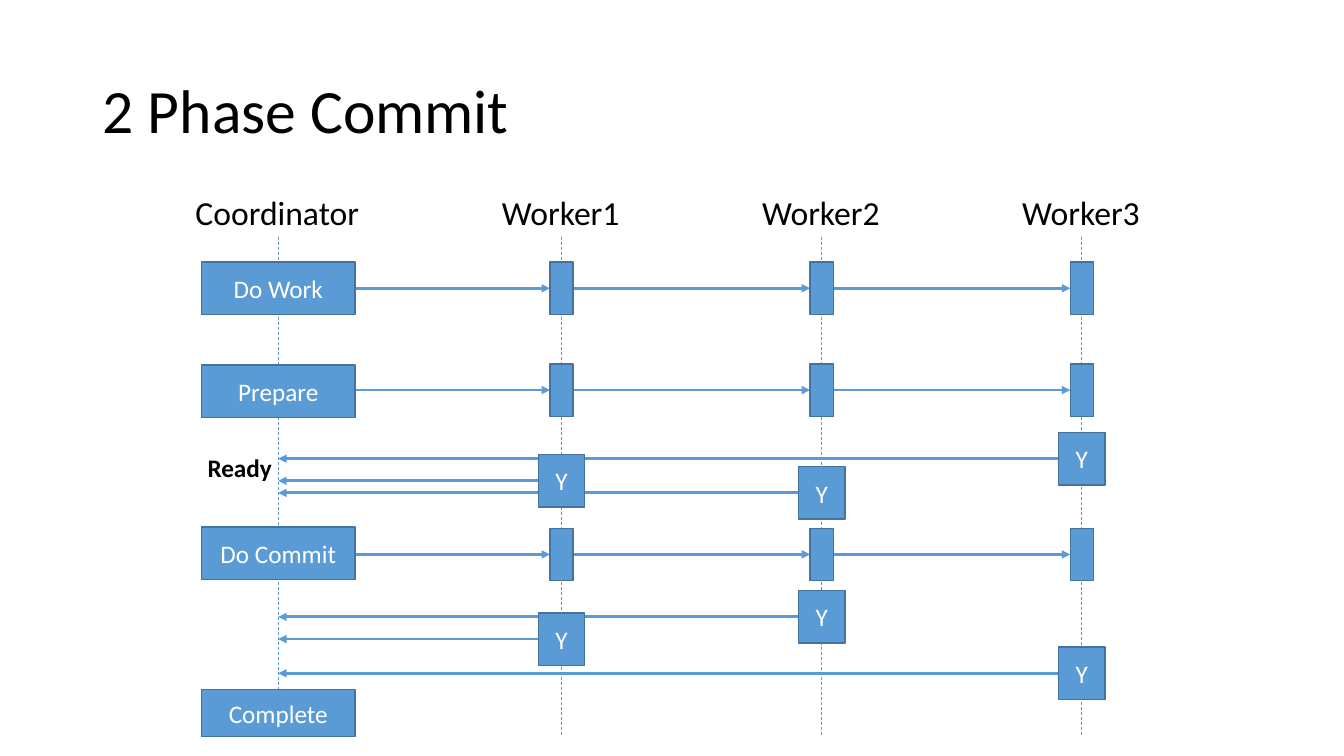
from pptx import Presentation
from pptx.dml.color import RGBColor
from pptx.enum.dml import MSO_LINE
from pptx.enum.shapes import MSO_CONNECTOR, MSO_SHAPE
from pptx.enum.text import MSO_ANCHOR, MSO_AUTO_SIZE, PP_ALIGN
from pptx.oxml.ns import qn
from pptx.util import Inches, Pt
from lxml import etree

BLUE = RGBColor(0x5B, 0x9B, 0xD5)
EDGE = RGBColor(0x43, 0x73, 0x9E)
BLACK = RGBColor(0, 0, 0)
WHITE = RGBColor(255, 255, 255)
RECT, STRAIGHT, DASH = MSO_SHAPE.RECTANGLE, MSO_CONNECTOR.STRAIGHT, MSO_LINE.DASH
MIDDLE, LEFT, CENTER = MSO_ANCHOR.MIDDLE, PP_ALIGN.LEFT, PP_ALIGN.CENTER
FIT = MSO_AUTO_SIZE.SHAPE_TO_FIT_TEXT

TITLE = "2 Phase Commit"
# name, lifeline x, label width
ROLES = [
    ("Coordinator", 2.76, 1.84),
    ("Worker1", 5.57, 1.38),
    ("Worker2", 8.15, 1.38),
    ("Worker3", 10.73, 1.38),
]
# text, top, height
STEPS = [
    ("Do Work", 2.6, 0.52),
    ("Prepare", 3.62, 0.52),
    ("Do Commit", 5.23, 0.52),
    ("Complete", 6.84, 0.47),
]
CALLS = [2.86, 3.87, 5.5]  # heights of the requests to the workers
# worker number, height of its answer
VOTES = [(3, 4.55), (2, 4.89), (1, 4.77), (3, 6.68), (2, 6.12), (1, 6.34)]

STEP_W, BAR_W, VOTE_W, BOX_H = 1.52, 0.23, 0.46, 0.52
LIFE_TOP, LIFE_END = 2.35, 7.31

prs = Presentation()
prs.slide_width, prs.slide_height = Inches(13.33), Inches(7.5)
slide = prs.slides.add_slide(prs.slide_layouts[5])
shapes = slide.shapes


def write(shape, text, align=LEFT, **style):
    frame = shape.text_frame
    frame.text = text
    para = frame.paragraphs[0]
    para.alignment = align
    para.font.color.rgb = style.pop("color", BLACK)
    for key, value in {"name": "Calibri", "size": Pt(18), **style}.items():
        setattr(para.font, key, value)


def label(text, x, y, w, h, **style):
    box = shapes.add_textbox(Inches(x), Inches(y), Inches(w), Inches(h))
    write(box, text, **style)
    box.text_frame.word_wrap = False
    box.text_frame.auto_size = FIT


def block(mid, top, w, h, text=""):
    """Draw a filled box centred on the lifeline at mid."""
    box = shapes.add_shape(RECT, Inches(mid - w / 2), Inches(top), Inches(w), Inches(h))
    box.shadow.inherit = False
    box.fill.solid()
    box.fill.fore_color.rgb = BLUE
    box.line.color.rgb = EDGE
    box.line.width = Pt(1)
    if text:
        write(box, text, CENTER, color=WHITE)
        box.text_frame.vertical_anchor = MIDDLE


def line(x1, y1, x2, y2, width):
    link = shapes.add_connector(STRAIGHT, Inches(x1), Inches(y1), Inches(x2), Inches(y2))
    link.line.color.rgb = BLUE
    link.line.width = Pt(width)
    etree.SubElement(link._element.spPr, qn("a:effectLst"))
    return link


def arrow(x1, x2, y):
    link = line(x1, y, x2, y, 2)
    etree.SubElement(link.line._get_or_add_ln(), qn("a:tailEnd"), type="triangle")


title = shapes.title
title.left, title.top = Inches(0.92), Inches(0.4)
title.width, title.height = Inches(11.5), Inches(1.45)
write(title, TITLE, size=Pt(44))
title.text_frame.vertical_anchor = MIDDLE
title.text_frame.paragraphs[0].line_spacing = 0.9

for name, x, w in ROLES:
    label(name, x - w / 2, 1.85, w, 0.5, size=Pt(24))
    line(x, LIFE_TOP, x, LIFE_END, 0.5).line.dash_style = DASH

mids = [x for _, x, _ in ROLES]
home, *workers = mids

for y in CALLS:
    starts = [home + STEP_W / 2] + workers[:-1]
    for start, mid in zip(starts, workers):
        arrow(start, mid - BAR_W / 2, y)
    for mid in workers:
        block(mid, y - BOX_H / 2, BAR_W, BOX_H)

for num, y in VOTES:
    arrow(mids[num] - VOTE_W / 2, home, y)
for num, y in VOTES:
    block(mids[num], y - BOX_H / 2, VOTE_W, BOX_H, "Y")

for text, top, h in STEPS:
    block(home, top, STEP_W, h, text)
label("Ready", 1.96, 4.44, 0.85, 0.4, bold=True)

prs.save("out.pptx")
